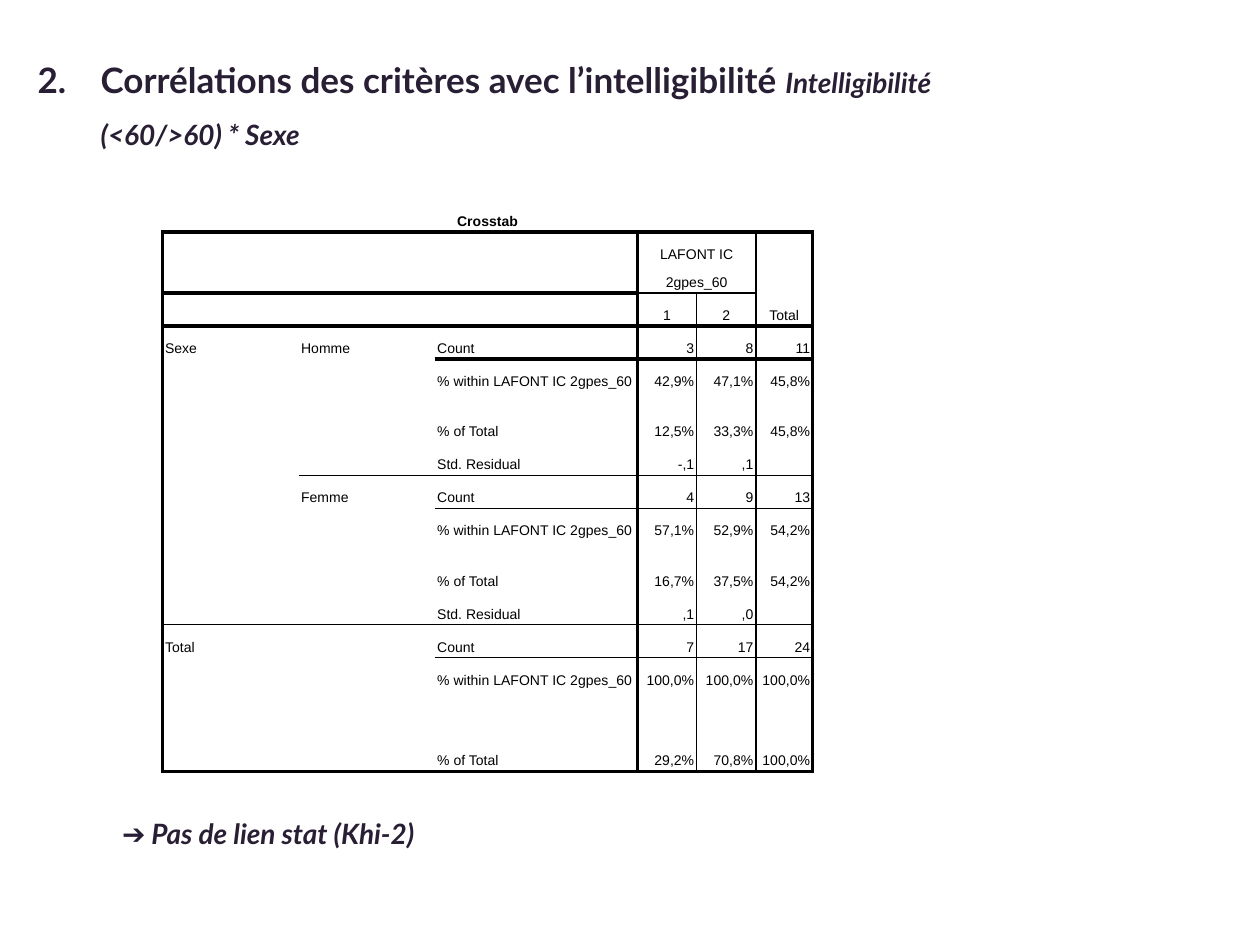
from dataclasses import dataclass
from typing import NamedTuple

from lxml import etree
from pptx import Presentation, util as u
from pptx.dml.color import RGBColor
from pptx.enum import text as t
from pptx.oxml.ns import qn

COLUMNS, ROWS = 100, 75  # slide grid
SLIDE_WIDTH, SLIDE_HEIGHT = u.Inches(10), u.Inches(7.5)
NO_STYLE = "{2D5ABB26-0587-4C30-8999-92F81FD0307C}"


@dataclass(frozen=True)
class Theme:
    ink: str = "291F35"
    black: str = "000000"
    white: str = "FFFFFF"
    heading_font: str = "Lato"
    table_font: str = "Arial"
    title_size: float = 20
    note_size: float = 16
    table_size: float = 8
    table_leading: float = 16
    heavy: float = 2.25
    thin: float = 1


class Frame(NamedTuple):
    """A place on the slide, in grid columns and rows."""
    column: float
    row: float
    width: float
    height: float


class Phrase(NamedTuple):
    text: str
    size: float
    italic: bool = False


class Group(NamedTuple):
    """Statistics of one sex, or of the whole sample."""
    rows: list


class Span(NamedTuple):
    row: int
    column: int
    height: int
    width: int


class Rule(NamedTuple):
    """A border line along one row edge or column edge of the table."""
    edge: int
    start: int
    stop: int
    width: float


THEME = Theme()
WITHIN = "% within LAFONT IC 2gpes_60"

COLUMN_WIDTHS = [10.8, 10.8, 16.1, 4.7, 4.7, 4.5]
GROUP_HEIGHTS = [2.4, 4, 2.4, 2.4]
ROW_HEIGHTS = [2.4, 4.4, 2.4] + GROUP_HEIGHTS * 3
HEADER_ROWS = 3
LABEL_COLUMNS = 3

GROUPS = [
    Group([("Sexe", "Homme", "Count", "3", "8", "11"),
           ("", "", WITHIN, "42,9%", "47,1%", "45,8%"),
           ("", "", "% of Total", "12,5%", "33,3%", "45,8%"),
           ("", "", "Std. Residual", "-,1", ",1", "")]),
    Group([("", "Femme", "Count", "4", "9", "13"),
           ("", "", WITHIN, "57,1%", "52,9%", "54,2%"),
           ("", "", "% of Total", "16,7%", "37,5%", "54,2%"),
           ("", "", "Std. Residual", ",1", ",0", "")]),
    Group([("Total", "", "Count", "7", "17", "24"),
           ("", "", WITHIN, "100,0%", "100,0%", "100,0%"),
           ("",) * 6,
           ("", "", "% of Total", "29,2%", "70,8%", "100,0%")]),
]
CROSSTAB = [
    ("Crosstab", "", "", "", "", ""),
    ("", "", "", "LAFONT IC 2gpes_60", "", "Total"),
    ("", "", "", "1", "2", ""),
] + [row for group in GROUPS for row in group.rows]

SPANS = [Span(0, 0, 1, 6), Span(1, 3, 1, 2), Span(1, 5, 2, 1), Span(3, 0, 8, 1),
         Span(3, 1, 4, 1), Span(7, 1, 4, 1), Span(11, 0, 4, 2)]
ROW_RULES = [Rule(1, 0, 6, THEME.heavy), Rule(2, 3, 5, THEME.thin),
             Rule(3, 0, 6, THEME.heavy), Rule(7, 1, 6, THEME.thin),
             Rule(11, 0, 6, THEME.thin), Rule(15, 0, 6, THEME.heavy)]
COLUMN_RULES = [Rule(0, 1, 15, THEME.heavy), Rule(3, 1, 15, THEME.heavy),
                Rule(4, 2, 15, THEME.thin), Rule(5, 1, 15, THEME.thin),
                Rule(6, 1, 15, THEME.heavy)]


def across(columns: float) -> int:
    return round(SLIDE_WIDTH * columns / COLUMNS)


def down(rows: float) -> int:
    return round(SLIDE_HEIGHT * rows / ROWS)


def place(frame: Frame) -> tuple:
    return (across(frame.column), down(frame.row),
            across(frame.width), down(frame.height))


def assign(target, values: dict) -> None:
    for name, value in values.items():
        setattr(target, name, value)


def add_run(paragraph, content: str, color: str, **font) -> None:
    run = paragraph.add_run()
    run.text = content
    assign(run.font, font)
    run.font.color.rgb = RGBColor.from_string(color)


def add_heading(slide, frame: Frame, phrases: list, wrap: bool):
    box = slide.shapes.add_textbox(*place(frame)).text_frame
    box.word_wrap = wrap
    paragraph = box.paragraphs[0]
    for phrase in phrases:
        add_run(paragraph, phrase.text, THEME.ink, name=THEME.heading_font,
                size=u.Pt(phrase.size), bold=True, italic=phrase.italic)
    return paragraph


def edge_widths(rules: list) -> dict:
    """Map (edge, position along it) to line width."""
    return {(rule.edge, position): rule.width
            for rule in rules for position in range(rule.start, rule.stop)}


def draw_borders(cell, widths: dict) -> None:
    properties = cell._tc.get_or_add_tcPr()
    for tag, width in widths.items():
        if width:
            line = etree.SubElement(properties, qn(f"a:{tag}"), w=str(u.Pt(width)))
            fill = etree.SubElement(line, qn("a:solidFill"))
            etree.SubElement(fill, qn("a:srgbClr"), val=THEME.black)


def write_cell(cell, content: str, row: int, column: int) -> None:
    paragraph = cell.text_frame.paragraphs[0]
    if not content:
        etree.SubElement(paragraph._p, qn("a:endParaRPr"),
                         sz=str(round(THEME.table_size * 100)))
        return
    inset = across(0.2)
    anchor = t.MSO_ANCHOR.TOP
    alignment = t.PP_ALIGN.LEFT if column < LABEL_COLUMNS else t.PP_ALIGN.RIGHT
    if row < HEADER_ROWS:
        anchor = t.MSO_ANCHOR.BOTTOM if row else t.MSO_ANCHOR.MIDDLE
        alignment = t.PP_ALIGN.CENTER
    assign(cell, dict(margin_left=inset, margin_right=inset, margin_top=inset,
                      margin_bottom=inset, vertical_anchor=anchor))
    assign(paragraph, dict(alignment=alignment, line_spacing=u.Pt(THEME.table_leading)))
    add_run(paragraph, content, THEME.black, name=THEME.table_font,
            size=u.Pt(THEME.table_size), bold=row == 0)


def add_crosstab(slide, column: float, row: float) -> None:
    frame = Frame(column, row, sum(COLUMN_WIDTHS), sum(ROW_HEIGHTS))
    table = slide.shapes.add_table(len(ROW_HEIGHTS), len(COLUMN_WIDTHS), *place(frame)).table
    assign(table, dict(first_row=False, horz_banding=False))
    table._tbl.tblPr.find(qn("a:tableStyleId")).text = NO_STYLE
    for table_column, width in zip(table.columns, COLUMN_WIDTHS):
        table_column.width = across(width)
    for table_row, height in zip(table.rows, ROW_HEIGHTS):
        table_row.height = down(height)
    for span in SPANS:
        table.cell(span.row, span.column).merge(
            table.cell(span.row + span.height - 1, span.column + span.width - 1))

    horizontal, vertical = edge_widths(ROW_RULES), edge_widths(COLUMN_RULES)
    sizes = {(s.row, s.column): (s.height, s.width) for s in SPANS}
    for r, contents in enumerate(CROSSTAB):
        for c, content in enumerate(contents):
            cell = table.cell(r, c)
            height, width = sizes.get((r, c), (1, 1))
            draw_borders(cell, dict(
                lnL=vertical.get((c, r)), lnR=vertical.get((c + width, r)),
                lnT=horizontal.get((r, c)), lnB=horizontal.get((r + height, c))))
            cell.fill.solid()
            cell.fill.fore_color.rgb = RGBColor.from_string(THEME.white)
            write_cell(cell, content, r, c)


def main() -> None:
    deck = Presentation()
    assign(deck, dict(slide_width=SLIDE_WIDTH, slide_height=SLIDE_HEIGHT))
    slide = deck.slides.add_slide(deck.slide_layouts[6])
    title = add_heading(slide, Frame(2, 2.5, 75.2, 15.1), [
        Phrase("2.\tCorrélations des critères avec l’intelligibilité ", THEME.title_size),
        Phrase("Intelligibilité (<60/>60) * Sexe", THEME.note_size, italic=True)], wrap=True)
    title.line_spacing = 1.5
    assign_indent = {"marL": across(5), "indent": -across(5)}
    for name, value in assign_indent.items():
        title._p.get_or_add_pPr().set(name, str(value))
    add_crosstab(slide, 12.9, 15.8)
    add_heading(slide, Frame(8.7, 64.3, 31.1, 3.7), [
        Phrase("➔ Pas de lien stat (Khi-2)", THEME.note_size, italic=True)], wrap=False)
    deck.save("out.pptx")


if __name__ == "__main__":
    main()
